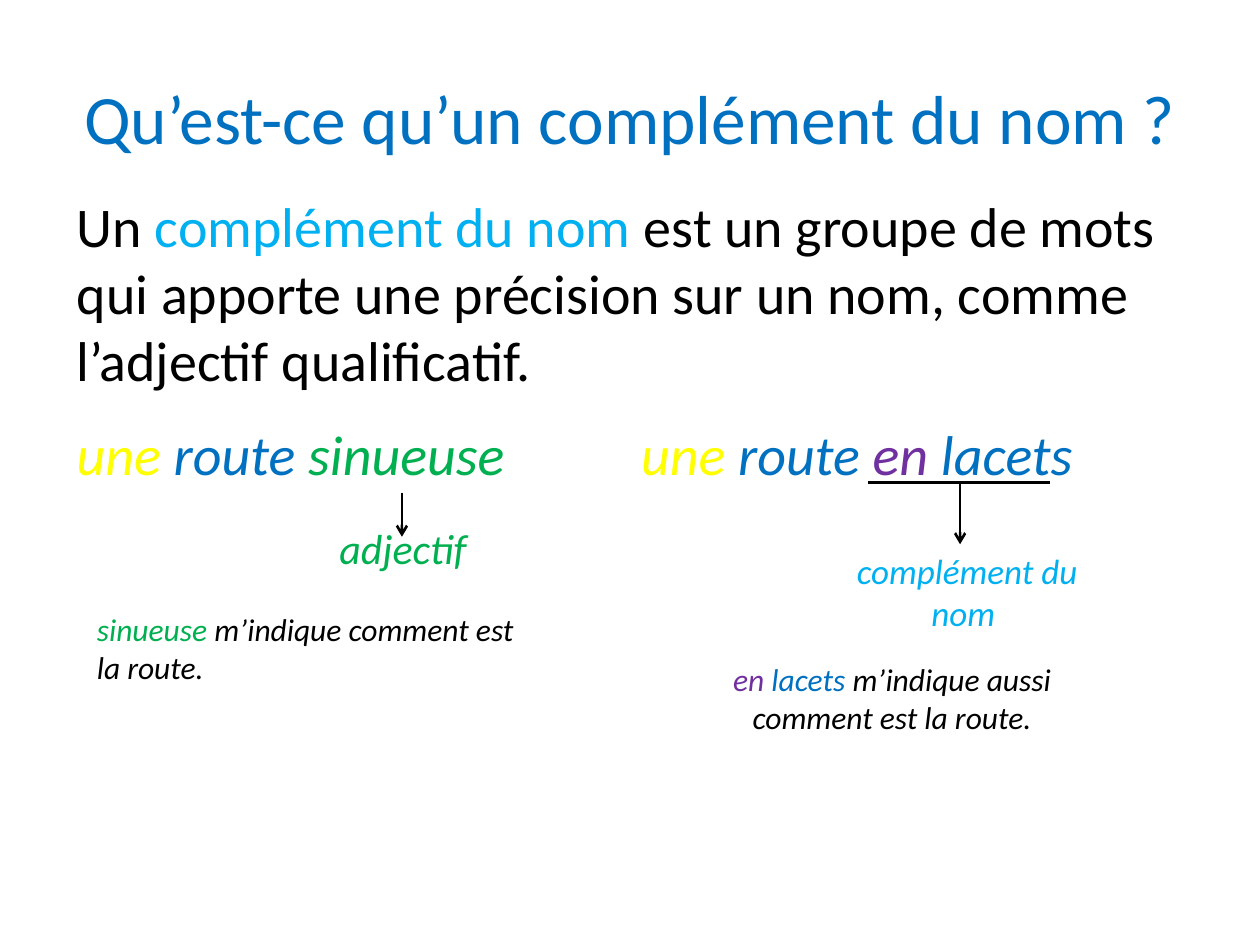
from lxml import etree
from pptx import Presentation, util as u
from pptx.dml.color import RGBColor
from pptx.enum import shapes, text
from pptx.oxml import ns

COLORS = {"black": "000000", "blue": "0070C0", "sky": "00B0F0",
          "yellow": "FFFF00", "green": "00B050", "purple": "7030A0"}
CENTER = text.PP_ALIGN.CENTER
LEFT = text.PP_ALIGN.LEFT


class LessonSlide:
    """Style and current slide, measured on a grid of 100 columns by 75 rows."""
    font = "Calibri"
    line_width = 1.5
    outline_width = 0.75
    columns, rows = 100, 75

    def __init__(self, deck):
        self.slide = deck.slides.add_slide(deck.slide_layouts[1])
        self.column = deck.slide_width / self.columns
        self.row = deck.slide_height / self.rows

    def grid(self, col, row):
        return u.Emu(round(col * self.column)), u.Emu(round(row * self.row))

    def add_words(self, frame, runs, size, align=LEFT, italic=False):
        """Runs are (words, color) pairs; yellow words get a thin black outline."""
        paragraph = frame.paragraphs[0]
        paragraph.alignment = align
        for words, color in runs:
            run = paragraph.add_run()
            run.text = words
            style = {"name": self.font, "size": u.Pt(size), "italic": italic}
            for key, value in style.items():
                setattr(run.font, key, value)
            run.font.color.rgb = RGBColor.from_string(COLORS[color])
            if color == "yellow":
                self.outline(run)
        return paragraph

    def outline(self, run):
        props = run._r.get_or_add_rPr()
        line = etree.Element(ns.qn("a:ln"), w=str(u.Pt(self.outline_width)))
        fill = etree.SubElement(line, ns.qn("a:solidFill"))
        etree.SubElement(fill, ns.qn("a:srgbClr"), val=COLORS["black"])
        props.insert(0, line)

    def placeholder(self, index, box, runs, size, **style):
        holder = self.slide.placeholders[index]
        holder.left, holder.top = self.grid(*box[:2])
        holder.width, holder.height = self.grid(*box[2:])
        return self.add_words(holder.text_frame, runs, size, **style)

    def title(self, box, runs, size):
        self.placeholder(0, box, runs, size, align=CENTER)

    def body(self, box, runs, size):
        props = self.placeholder(1, box, runs, size)._p.get_or_add_pPr()
        for key in ("marL", "indent"):
            props.set(key, "0")
        etree.SubElement(props, ns.qn("a:buNone"))

    def label(self, box, runs, size, align=LEFT):
        frame = self.slide.shapes.add_textbox(
            *self.grid(*box[:2]), *self.grid(*box[2:])).text_frame
        settings = {"word_wrap": True,
                    "auto_size": text.MSO_AUTO_SIZE.SHAPE_TO_FIT_TEXT}
        for key, value in settings.items():
            setattr(frame, key, value)
        self.add_words(frame, runs, size, align, italic=True)

    def line(self, start, end, arrow=False):
        link = self.slide.shapes.add_connector(
            shapes.MSO_CONNECTOR.STRAIGHT, *self.grid(*start), *self.grid(*end))
        link.line.width = u.Pt(self.line_width)
        link.line.color.rgb = RGBColor.from_string(COLORS["black"])
        if arrow:
            etree.SubElement(link.line._get_or_add_ln(),
                             ns.qn("a:tailEnd"), type="arrow")
        etree.SubElement(link._element.spPr, ns.qn("a:effectLst"))


def main():
    deck = Presentation()
    deck.slide_width, deck.slide_height = u.Inches(10), u.Inches(7.5)
    lesson = LessonSlide(deck)

    # Question and definition
    lesson.title((5, 3, 90, 12.5),
                 [("Qu’est-ce qu’un complément du nom ?", "blue")], 39.6)
    lesson.body((5.1, 14.7, 90, 19.4), [
        ("Un ", "black"), ("complément du nom ", "sky"),
        ("est un groupe de mots qui apporte une précision sur un nom, "
         "comme l’adjectif qualificatif.", "black")], 32)

    # Example with an adjective
    noun = [("une ", "yellow"), ("route ", "blue")]
    lesson.label((5.1, 32.8, 44.3, 6.4), noun + [("sinueuse", "green")], 32)
    lesson.label((25.2, 41, 13.4, 5),
                 [(" ", "blue"), ("adjectif", "green")], 24)
    lesson.line((31.9, 39.1), (31.9, 42.6), arrow=True)
    lesson.label((6.7, 47.9, 36.2, 7.1), [
        ("sinueuse", "green"),
        (" m’indique comment est la route.", "black")], 18)

    # Example with a noun complement
    complement = [("en ", "purple"), ("lacets", "blue")]
    lesson.label((49.9, 32.8, 49, 11.1), noun + complement, 32)
    lesson.label((65.9, 43.1, 21.1, 8.4),
                 [(" ", "blue"), ("complément du nom", "sky")], 20, CENTER)
    lesson.line((76.2, 38.3), (76.2, 43.2), arrow=True)
    lesson.label((52.7, 51.9, 36.2, 7.1), complement + [
        (" m’indique aussi comment est la route.", "black")], 18, CENTER)
    lesson.line((68.9, 38.3), (83.3, 38.3))

    deck.save("out.pptx")


if __name__ == "__main__":
    main()
